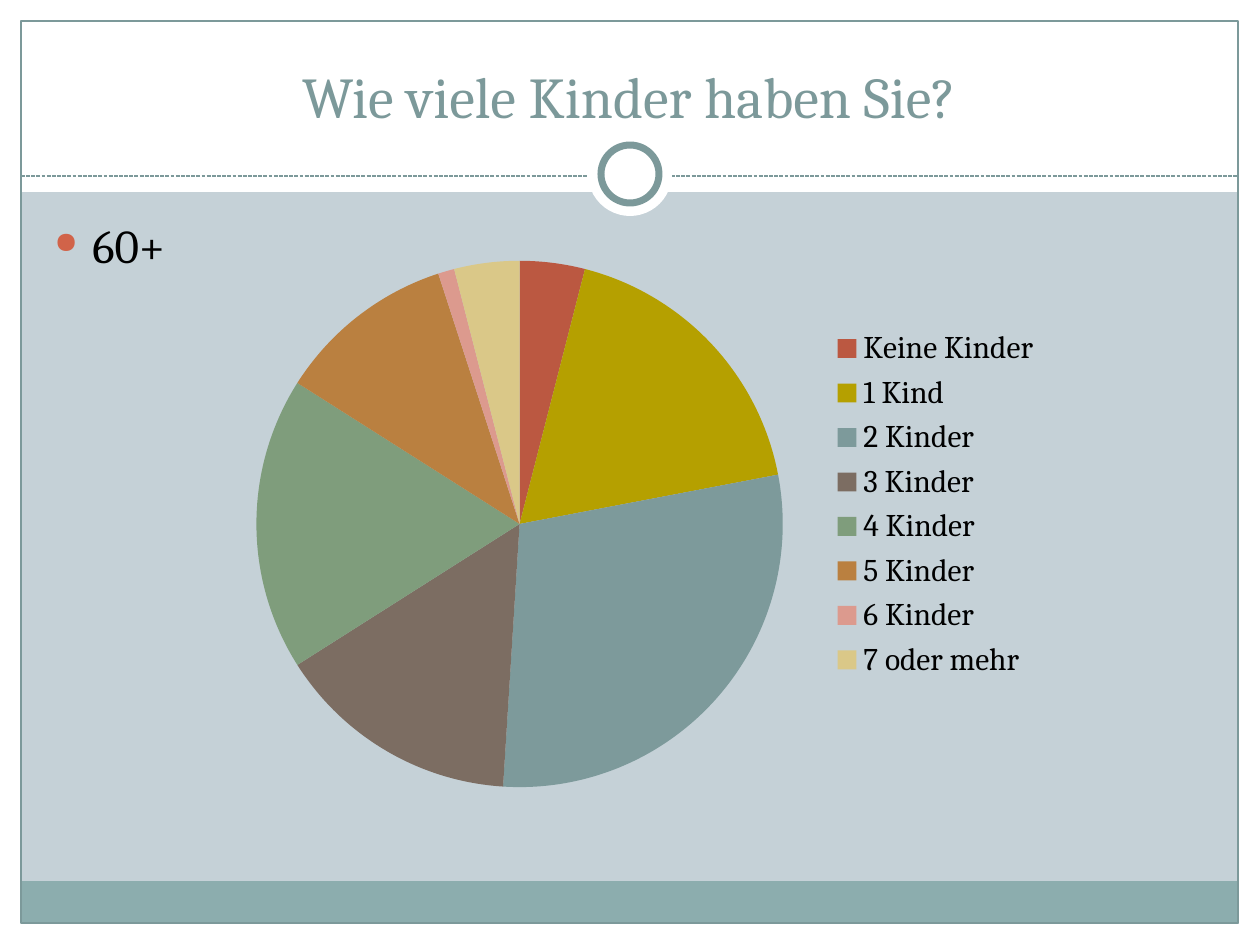
from pptx import Presentation
from pptx import util as u
from pptx.chart.data import CategoryChartData
from pptx.dml.color import RGBColor
from pptx.enum import chart as charts, dml, shapes, text
from pptx.oxml import parse_xml
from pptx.oxml.ns import nsdecls, qn
from lxml import etree

PX = u.Inches(1) / 126
THEME = {
    "font": "Cambria", "title_size": 33, "body_size": 27, "legend_size": 18,
    "background": "C5D1D7", "white": "FFFFFF", "frame": "7C999A",
    "footer": "8CADAE", "bullet": "D16349", "ink": "000000",
    "slices": ["BB5841", "B5A000", "7D9A9B", "7C6D62",
               "7F9D7C", "BA8040", "DC9A8E", "DAC888"],
}


def add_shape(kind, box, fill=None, line_width=None):
    shape = slide.shapes.add_shape(kind, *[round(v * PX) for v in box])
    shape.shadow.inherit = False
    if fill:
        shape.fill.solid()
        shape.fill.fore_color.rgb = RGBColor.from_string(THEME[fill])
    else:
        shape.fill.background()
    if line_width:
        shape.line.color.rgb = RGBColor.from_string(THEME["frame"])
        shape.line.width = u.Pt(line_width)
    else:
        shape.line.fill.background()


def add_text(box, wording, size, color, anchor):
    text_box = slide.shapes.add_textbox(*[round(v * PX) for v in box])
    frame = text_box.text_frame
    frame.word_wrap = True
    frame.vertical_anchor = anchor
    frame.text = wording
    paragraph = frame.paragraphs[0]
    font = paragraph.runs[0].font
    font.name = THEME["font"]
    font.size = u.Pt(THEME[size])
    font.color.rgb = RGBColor.from_string(THEME[color])
    return paragraph


presentation = Presentation()
presentation.slide_width = round(1260 * PX)
presentation.slide_height = round(945 * PX)
slide = presentation.slides.add_slide(presentation.slide_layouts[6])
slide.background.fill.solid()
slide.background.fill.fore_color.rgb = RGBColor.from_string(THEME["background"])

# White margins, footer band and frame
RECTANGLE, OVAL = shapes.MSO_SHAPE.RECTANGLE, shapes.MSO_SHAPE.OVAL
for margin in [(0, 924, 1260, 21), (0, 0, 1260, 192),
               (0, 0, 21, 945), (1239, 0, 21, 945)]:
    add_shape(RECTANGLE, margin, "white")
add_shape(RECTANGLE, (21, 881, 1217, 43), "footer")
add_shape(RECTANGLE, (21, 21, 1217, 902), line_width=0.75)

# Dashed rule under the title
rule = slide.shapes.add_connector(
    shapes.MSO_CONNECTOR.STRAIGHT, *[round(v * PX) for v in (21, 176, 1239, 176)])
rule.line.color.rgb = RGBColor.from_string(THEME["frame"])
rule.line.width = u.Pt(0.75)
rule.line.dash_style = dml.MSO_LINE.SQUARE_DOT
etree.SubElement(rule._element.spPr, qn("a:effectLst"))

# Ring on the rule
add_shape(OVAL, (588, 132, 84, 84), "white")
add_shape(OVAL, (601, 145, 58, 58), "white", 4)

# Title
title = add_text((41, 32, 1176, 104), "Wie viele Kinder haben Sie?",
                 "title_size", "frame", text.MSO_ANCHOR.BOTTOM)
title.alignment = text.PP_ALIGN.CENTER

# Bulleted age group
age_group = add_text((42, 210, 1172, 630), "60+", "body_size", "ink",
                     text.MSO_ANCHOR.TOP)
age_group.space_before = u.Pt(5.4)
properties = age_group._p.get_or_add_pPr()
properties.set("marL", str(round(38 * PX)))
properties.set("indent", str(round(-38 * PX)))
for bullet_part in [
    f'<a:buClr {nsdecls("a")}><a:srgbClr val="{THEME["bullet"]}"/></a:buClr>',
    f'<a:buSzPct {nsdecls("a")} val="63000"/>',
    f'<a:buChar {nsdecls("a")} char="●"/>',
]:
    properties.append(parse_xml(bullet_part))

# Pie chart
data = CategoryChartData()
data.categories = ["Keine Kinder", "1 Kind"] + [
    f"{count} Kinder" for count in range(2, 7)] + ["7 oder mehr"]
data.add_series("Series 1", [4, 18, 29, 15, 18, 11, 1, 4])
chart = slide.shapes.add_chart(
    charts.XL_CHART_TYPE.PIE, *[round(v * PX) for v in (213, 244, 840, 560)],
    data).chart
chart.has_title = False
chart.font.name = THEME["font"]
chart.font.size = u.Pt(THEME["legend_size"])
chart.font.color.rgb = RGBColor.from_string(THEME["ink"])
chart.has_legend = True
chart.legend.position = charts.XL_LEGEND_POSITION.RIGHT
chart.legend.include_in_layout = False
pie = chart.plots[0]
pie.vary_by_categories = True
for index, color in enumerate(THEME["slices"]):
    point = pie.series[0].points[index]
    point.format.fill.solid()
    point.format.fill.fore_color.rgb = RGBColor.from_string(color)
    point.format.line.fill.background()

# Fixed places of the pie and the legend inside the chart
plot_area, legend = chart._chartSpace.chart.plotArea, chart.legend._element
for part, target, box in [
    (plot_area, '<c:layoutTarget val="inner"/>', (0.05, 0.03, 0.63, 0.94)),
    (legend, "", (0.73, 0.14, 0.26, 0.65)),
]:
    for old_layout in part.findall(qn("c:layout")):
        part.remove(old_layout)
    sides = "".join(f'<c:{side} val="{value}"/>' for side, value in zip("xywh", box))
    part.insert(0 if part is plot_area else 1, parse_xml(
        f'<c:layout {nsdecls("c")}><c:manualLayout>{target}<c:xMode val="edge"/>'
        f'<c:yMode val="edge"/>{sides}</c:manualLayout></c:layout>'))

presentation.save("out.pptx")
